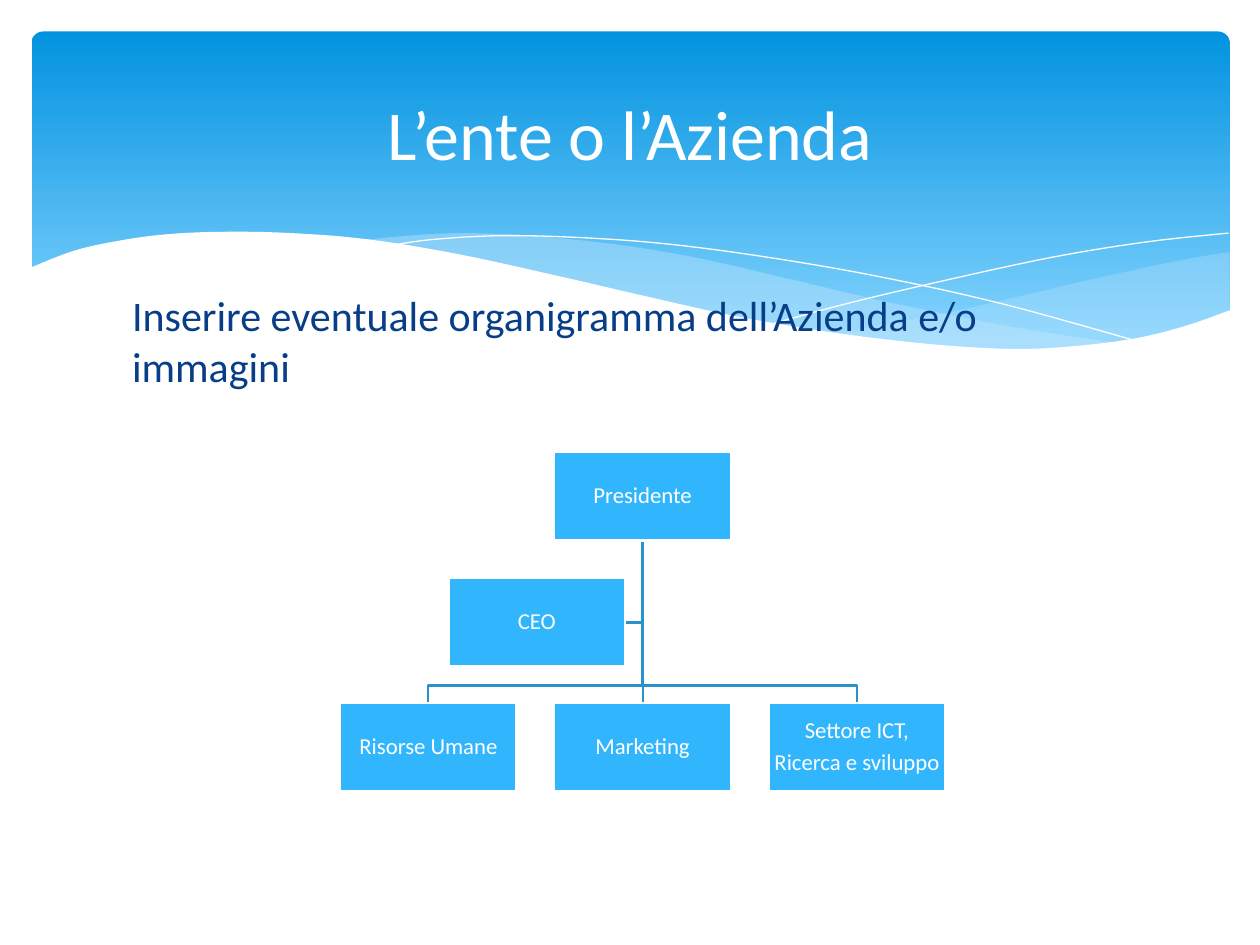
"""Build a company organisation slide with a wave banner and a small chart of roles."""
from dataclasses import dataclass

from lxml.etree import SubElement
from pptx import Presentation
from pptx.dml.color import RGBColor
from pptx.enum.shapes import MSO_CONNECTOR, MSO_SHAPE
from pptx.enum.text import MSO_ANCHOR, PP_ALIGN
from pptx.oxml.ns import qn
from pptx.util import Inches, Pt


@dataclass(frozen=True)
class Theme:
    font: str = "Calibri"
    white: str = "FFFFFF"
    navy: str = "073E87"
    box: str = "31B6FD"
    link: str = "2792CB"
    mist: str = "C6E7FC"
    top: str = "0293E0"
    low: str = "83D3FE"
    title: int = 40
    body: int = 24
    label: int = 13
    rule: float = 1.25


def curve(knots, steps=6):
    ends = [knots[0], *knots, knots[-1]]
    dots = [knots[0]]
    for a, b, c, d in zip(ends, ends[1:], ends[2:], ends[3:]):
        for step in range(1, steps + 1):
            t = step / steps
            dots.append(tuple(
                (2 * q + (r - p) * t + (2 * p - 5 * q + 4 * r - s) * t ** 2
                 + (3 * q - p - 3 * r + s) * t ** 3) / 2
                for p, q, r, s in zip(a, b, c, d)))
    return dots


class Canvas:
    def __init__(self, slide, theme):
        self.slide = slide
        self.theme = theme

    def stroke(self, shape, color, width):
        shape.line.color.rgb = RGBColor.from_string(color)
        shape.line.width = Pt(width)

    def paint(self, shape, color, alpha=100):
        shape.fill.solid()
        shape.fill.fore_color.rgb = RGBColor.from_string(color)
        if alpha < 100:
            tint = shape._element.spPr.find(qn("a:solidFill"))[0]
            SubElement(tint, qn("a:alpha"), val=str(alpha * 1000))

    def banner(self, x, y, w, h):
        shape = self.slide.shapes.add_shape(
            MSO_SHAPE.ROUNDED_RECTANGLE, Inches(x), Inches(y), Inches(w), Inches(h))
        shape.adjustments[0] = 0.034
        shape.shadow.inherit = False
        shape.line.fill.background()
        shape.fill.gradient()
        shape.fill.gradient_angle = 270
        tones = ((0, self.theme.top), (0.9, self.theme.low))
        for stop, (place, color) in zip(shape.fill.gradient_stops, tones):
            stop.position = place
            stop.color.rgb = RGBColor.from_string(color)

    def trace(self, dots, close):
        dots = [(Inches(x), Inches(y)) for x, y in dots]
        pen = self.slide.shapes.build_freeform(*dots[0])
        pen.add_line_segments(dots[1:], close=close)
        shape = pen.convert_to_shape()
        shape.shadow.inherit = False
        return shape

    def wave(self, dots, color, alpha=100):
        shape = self.trace(dots, True)
        self.paint(shape, color, alpha)
        shape.line.fill.background()

    def thread(self, dots, color, width):
        shape = self.trace(dots, False)
        shape.fill.background()
        self.stroke(shape, color, width)

    def link(self, x1, y1, x2, y2):
        line = self.slide.shapes.add_connector(
            MSO_CONNECTOR.STRAIGHT, Inches(x1), Inches(y1), Inches(x2), Inches(y2))
        self.stroke(line, self.theme.link, self.theme.rule)
        SubElement(line._element.spPr, qn("a:effectLst"))

    def words(self, para, text, size, color):
        run = para.add_run()
        run.text = text
        run.font.name = self.theme.font
        run.font.size = Pt(size)
        run.font.color.rgb = RGBColor.from_string(color)

    def text(self, x, y, w, h, line, size, color, align, anchor):
        frame = self.slide.shapes.add_textbox(
            Inches(x), Inches(y), Inches(w), Inches(h)).text_frame
        frame.word_wrap = True
        frame.vertical_anchor = anchor
        para = frame.paragraphs[0]
        para.alignment = align
        self.words(para, line, size, color)

    def box(self, x, y, w, h, lines):
        shape = self.slide.shapes.add_shape(
            MSO_SHAPE.RECTANGLE, Inches(x), Inches(y), Inches(w), Inches(h))
        shape.shadow.inherit = False
        self.paint(shape, self.theme.box)
        self.stroke(shape, self.theme.white, self.theme.rule)
        frame = shape.text_frame
        frame.word_wrap = True
        frame.vertical_anchor = MSO_ANCHOR.MIDDLE
        frame.margin_left = frame.margin_right = Inches(0.01)
        frame.margin_top = frame.margin_bottom = Inches(0.01)
        for i, line in enumerate(lines):
            para = frame.add_paragraph() if i else frame.paragraphs[0]
            para.alignment = PP_ALIGN.CENTER
            para.line_spacing = 0.9
            para.space_after = Pt(0.35 * self.theme.label)
            self.words(para, line, self.theme.label, self.theme.white)


def scene(art):
    look = art.theme
    art.banner(0.25, 0.25, 9.51, 2.7)
    art.wave(
        curve([(9.76, 2), (9.35, 2.07), (8.61, 2.23), (7.53, 2.48), (6.61, 2.65)])
        + curve([(6.61, 2.65), (7.19, 2.72), (7.69, 2.77), (8.14, 2.78), (8.63, 2.75),
                 (9.13, 2.67), (9.49, 2.57), (9.76, 2.47)]), look.mist, 29)
    art.wave(
        curve([(8.93, 2.73), (8.07, 2.6), (7.06, 2.4), (6.29, 2.22), (5.55, 2.05),
               (4.89, 1.94), (4.2, 1.87), (3.61, 1.85), (3.13, 1.88), (2.86, 1.91)])
        + curve([(2.86, 1.91), (3.62, 2.03), (4.49, 2.22), (5.3, 2.4), (6.01, 2.55),
                 (6.65, 2.66), (7.22, 2.74), (7.73, 2.77), (8.18, 2.78), (8.57, 2.77),
                 (8.93, 2.73)]), look.mist, 40)
    art.thread(
        curve([(3.09, 1.95), (3.44, 1.9), (4.01, 1.87), (4.69, 1.89), (5.33, 1.94),
               (6.08, 2.04), (6.95, 2.19), (7.95, 2.41), (9.07, 2.72)]), look.white, 0)
    art.thread(
        curve([(6.13, 2.57), (6.72, 2.41), (7.48, 2.23), (8.36, 2.04), (9.1, 1.92),
               (9.75, 1.85)]), look.white, 0)
    art.wave(
        curve([(9.77, 2.46), (9.4, 2.59), (8.99, 2.69), (8.5, 2.75), (8.09, 2.77),
               (7.61, 2.75), (7.08, 2.7), (6.48, 2.62), (5.79, 2.5), (5.03, 2.33),
               (4.47, 2.2), (3.65, 2.02), (2.92, 1.9), (2.3, 1.85), (1.77, 1.84),
               (1.32, 1.86), (0.95, 1.91), (0.59, 1.99), (0.23, 2.13)])
        + [(0.23, 3.29), (9.77, 3.29)], look.white)

    art.text(0.95, 2.25, 8.1, 4.45, "Inserire eventuale organigramma dell’Azienda e/o immagini",
             look.body, look.navy, PP_ALIGN.LEFT, MSO_ANCHOR.TOP)
    art.text(0.5, 0.37, 9, 1.37, "L’ente o l’Azienda",
             look.title, look.white, PP_ALIGN.CENTER, MSO_ANCHOR.MIDDLE)

    wide, high, step, mid = 1.4, 0.7, 1.7, 5.1
    head, aide, base, bar = 3.59, 4.59, 5.58, 5.44
    foot, tie, edge = head + high, aide + high / 2, 4.96
    art.link(mid, foot, mid, base)
    art.link(mid, tie, edge, tie)
    units = (["Risorse Umane"], ["Marketing"], ["Settore ICT,", "Ricerca e sviluppo"])
    spots = [mid + step * n for n in (-1, 0, 1)]
    for x in (spots[0], spots[-1]):
        art.thread([(mid, foot), (mid, bar), (x, bar), (x, base)], look.link, look.rule)
    art.box(mid - wide / 2, head, wide, high, ["Presidente"])
    art.box(edge - wide, aide, wide, high, ["CEO"])
    for x, lines in zip(spots, units):
        art.box(x - wide / 2, base, wide, high, lines)


def main():
    deck = Presentation()
    deck.slide_width, deck.slide_height = Inches(10), Inches(7.5)
    scene(Canvas(deck.slides.add_slide(deck.slide_layouts[6]), Theme()))
    deck.save("out.pptx")


if __name__ == "__main__":
    main()
